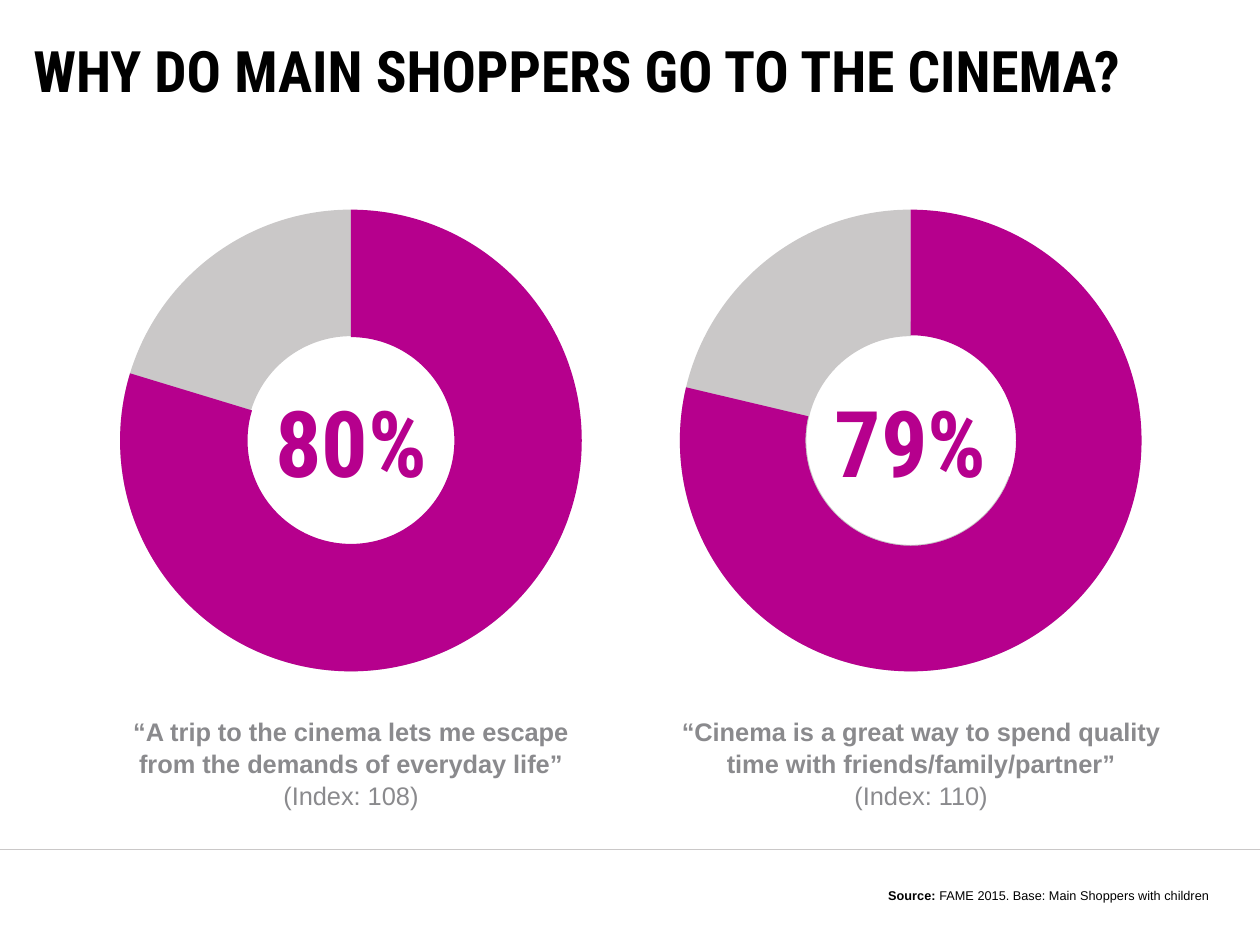
from lxml import etree
from pptx import Presentation
from pptx.dml.color import RGBColor
from pptx.enum.shapes import MSO_CONNECTOR, MSO_SHAPE
from pptx.enum.text import MSO_ANCHOR, PP_ALIGN
from pptx.oxml.ns import qn
from pptx.util import Cm, Pt

BLOCK_ARC = MSO_SHAPE.BLOCK_ARC
STRAIGHT = MSO_CONNECTOR.STRAIGHT
TOP, MIDDLE, BOTTOM = MSO_ANCHOR.TOP, MSO_ANCHOR.MIDDLE, MSO_ANCHOR.BOTTOM
LEFT, CENTER, RIGHT = PP_ALIGN.LEFT, PP_ALIGN.CENTER, PP_ALIGN.RIGHT

HEADLINE_FONT, BODY_FONT = "Roboto Condensed", "Arial"
BLACK, GREY, SILVER, MAGENTA = "000000", "8A8A8D", "CAC8C8", "B6008D"

SLIDE_WIDTH, SLIDE_HEIGHT = 28, 21
RING_TOP, RING_SIZE = 4.66, 10.26
TWELVE_OCLOCK = 270  # degrees, clockwise from three o'clock

# ring centre, drawn share, hole ratio, label, quote, index, caption centre and width
REASONS = [
    (7.8, 0.797, 0.276, "80%",
     "“A trip to the cinema lets me escape from the demands of everyday life”",
     "(Index: 108)", 7.8, 10.97),
    (20.24, 0.787, 0.272, "79%",
     "“Cinema is a great way to spend quality time with friends/family/partner”",
     "(Index: 110)", 20.47, 11.48),
]


def color(hex_value):
    return RGBColor.from_string(hex_value)


def add_text(slide, box, paragraphs, font, size, text_color, align,
             anchor=TOP, wrap=True, margins=True, line_spacing=None):
    """Each paragraph is a list of (text, bold) runs."""
    frame = slide.shapes.add_textbox(*[Cm(v) for v in box]).text_frame
    frame.word_wrap = wrap
    frame.vertical_anchor = anchor
    if not margins:
        frame.margin_left = frame.margin_right = 0
        frame.margin_top = frame.margin_bottom = 0
    for i, runs in enumerate(paragraphs):
        paragraph = frame.add_paragraph() if i else frame.paragraphs[0]
        paragraph.alignment = align
        if line_spacing:
            paragraph.line_spacing = Pt(line_spacing)
        for text, bold in runs:
            run = paragraph.add_run()
            run.text = text
            run.font.name = font
            run.font.size = Pt(size)
            run.font.bold = bold
            run.font.color.rgb = color(text_color)


def add_arc(slide, center, start, end, thickness, fill):
    arc = slide.shapes.add_shape(BLOCK_ARC, Cm(center - RING_SIZE / 2), Cm(RING_TOP),
                                 Cm(RING_SIZE), Cm(RING_SIZE))
    # Angles are stored in 60000ths of a degree, adjustments in 100000ths
    arc.adjustments[0] = start % 360 * 0.6
    arc.adjustments[1] = end % 360 * 0.6
    arc.adjustments[2] = thickness
    arc.shadow.inherit = False
    arc.fill.solid()
    arc.fill.fore_color.rgb = color(fill)
    arc.line.fill.background()


def add_ring(slide, center, share, thickness, label):
    # The silver remainder reaches under the magenta share
    add_arc(slide, center, 20, TWELVE_OCLOCK, 0.274, SILVER)
    add_arc(slide, center, TWELVE_OCLOCK, TWELVE_OCLOCK + 360 * share, thickness, MAGENTA)
    add_text(slide, (center - 2.82, 8.43, 5.64, 2.74), [[(label, True)]],
             HEADLINE_FONT, 58, MAGENTA, CENTER, MIDDLE)


def add_rule(slide, y):
    rule = slide.shapes.add_connector(STRAIGHT, 0, Cm(y), Cm(SLIDE_WIDTH), Cm(y))
    rule.line.color.rgb = color(SILVER)
    rule.line.width = Pt(0.5)
    etree.SubElement(rule._element.spPr, qn("a:effectLst"))


def main():
    deck = Presentation()
    deck.slide_width, deck.slide_height = Cm(SLIDE_WIDTH), Cm(SLIDE_HEIGHT)
    slide = deck.slides.add_slide(deck.slide_layouts[6])

    # Footer rule and headline
    add_rule(slide, 18.87)
    add_text(slide, (0.74, 0.97, 25.86, 1.14),
             [[("WHY DO MAIN SHOPPERS GO TO THE CINEMA?", True)]],
             HEADLINE_FONT, 36, BLACK, LEFT, MIDDLE, wrap=False, margins=False)

    # One ring and caption per reason
    for center, share, thickness, label, quote, index, caption_center, width in REASONS:
        add_ring(slide, center, share, thickness, label)
        add_text(slide, (caption_center - width / 2, 15.77, width, 2.39),
                 [[(quote, True)], [(index, False)]],
                 BODY_FONT, 16, GREY, CENTER, line_spacing=20)

    # Source
    add_text(slide, (12.22, 19.58, 14.91, 0.61),
             [[("Source: ", True), ("FAME 2015. Base: Main Shoppers with children", False)]],
             BODY_FONT, 8, BLACK, RIGHT, BOTTOM)

    deck.save("out.pptx")


if __name__ == "__main__":
    main()
